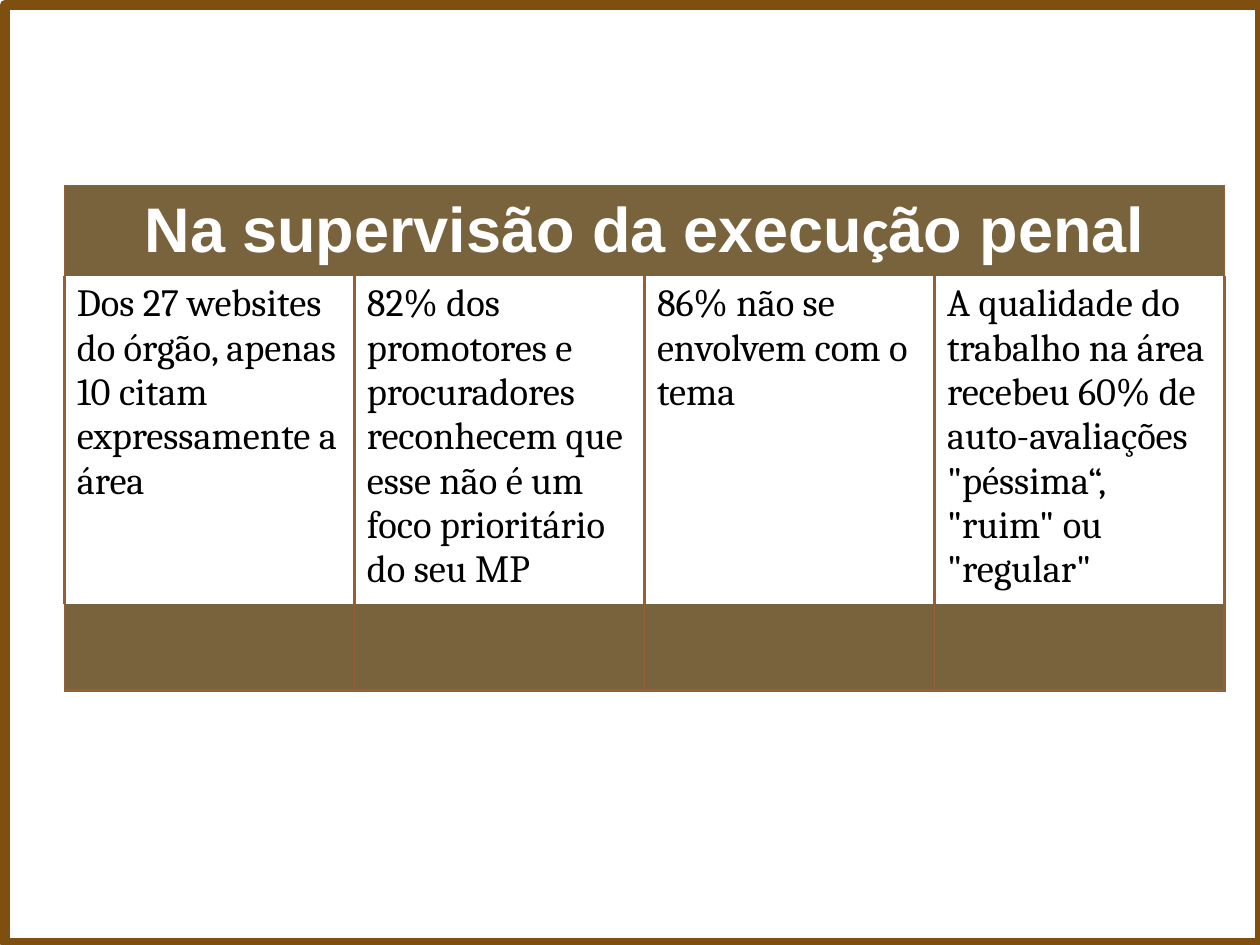
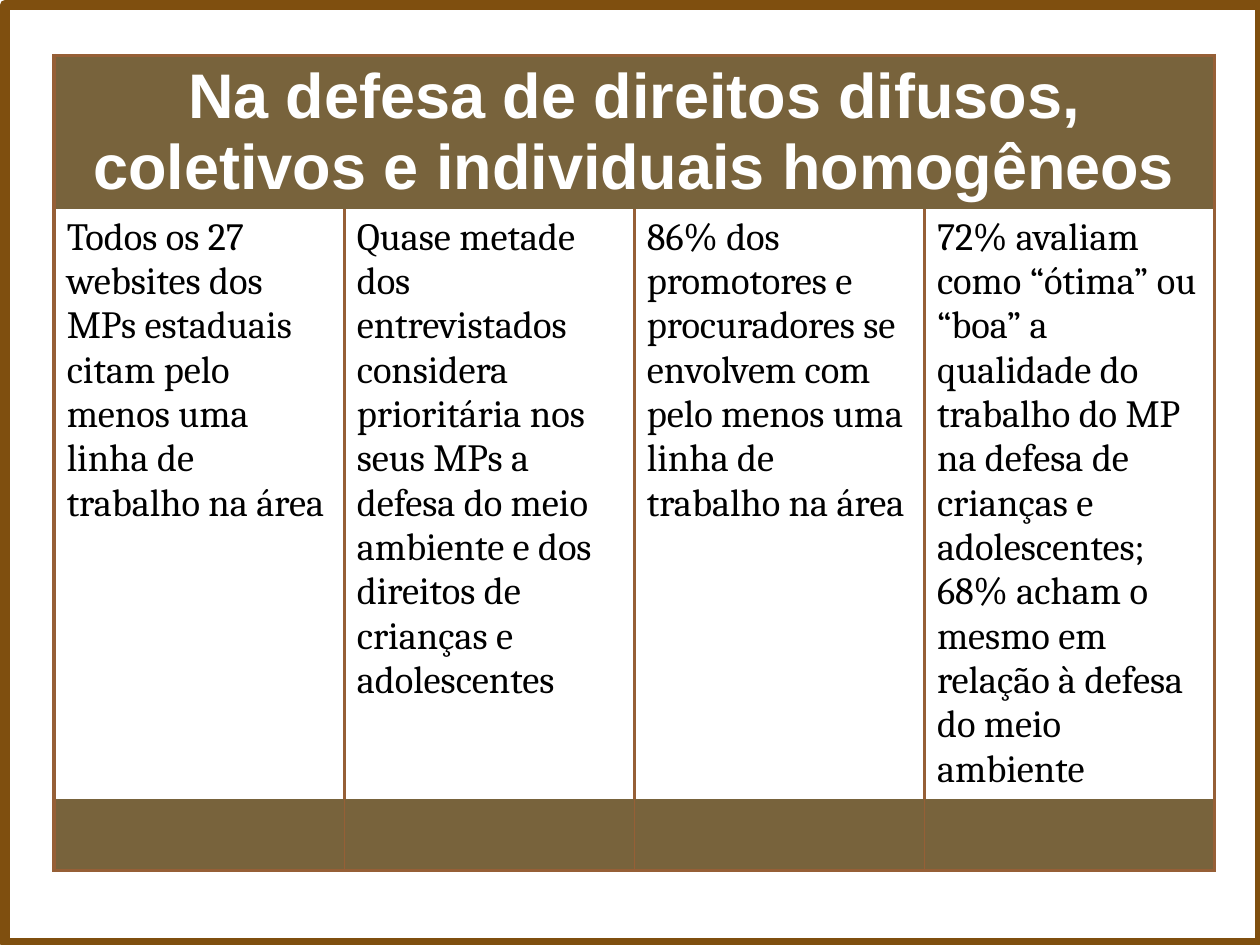
"""Build two framed slides, each with a four-column table of survey findings."""
import pptx
import pptx.dml.color
import pptx.enum.shapes
import pptx.enum.text
import pptx.oxml
import pptx.oxml.ns
import pptx.util

RGBColor = pptx.dml.color.RGBColor
Inches = pptx.util.Inches
Pt = pptx.util.Pt

WHITE = RGBColor(0xFF, 0xFF, 0xFF)
BLACK = RGBColor(0x00, 0x00, 0x00)
FRAME_BROWN = RGBColor(0x7F, 0x4F, 0x0F)
BAND_BROWN = RGBColor(0x78, 0x63, 0x3C)
RULE_BROWN = RGBColor(0x96, 0x5F, 0x36)

COLUMN_COUNT = 4
TABLE_WIDTH = 9.21
THICK = 2.25

FINDINGS = [
    {
        "heading": [("Na supervisão da execu", "Arial"), ("ç", "Calibri"), ("ão penal", "Arial")],
        "answers": [
            "Dos 27 websites do órgão, apenas 10 citam expressamente a área",
            "82% dos promotores e procuradores reconhecem que esse não é um foco prioritário do seu MP",
            "86% não se envolvem com o tema",
            "A qualidade do trabalho na área recebeu 60% de auto-avaliações \"péssima“, \"ruim\" ou \"regular\"",
        ],
        "corner": (0.51, 1.47),
        "rows": (0.72, 2.6, 0.69),
        "heading_rule": 0.75,
        "footer_rules": (0.75, 0.75, 0.75, 0.75, THICK),
    },
    {
        "heading": [("Na defesa de direitos difusos, coletivos e individuais homogêneos", "Arial")],
        "answers": [
            "Todos os 27 websites dos MPs estaduais citam pelo menos uma linha de trabalho na área",
            "Quase metade dos entrevistados considera prioritária nos seus MPs a defesa do meio "
            "ambiente e dos direitos de crianças e adolescentes",
            "86% dos promotores e procuradores se envolvem com pelo menos uma linha de trabalho na área",
            "72% avaliam como “ótima” ou “boa” a qualidade do trabalho do MP na defesa de crianças e "
            "adolescentes; 68% acham o mesmo em relação à defesa do meio ambiente",
        ],
        "corner": (0.43, 0.44),
        "rows": (1.22, 4.68, 0.57),
        "heading_rule": THICK,
        "footer_rules": (THICK, 1, 1, 1, THICK),
    },
]


def write(paragraph, text, font="Cambria", size=22, color=BLACK, bold=False):
    run = paragraph.add_run()
    run.text = text
    run.font.name = font
    run.font.size = Pt(size)
    run.font.bold = bold
    run.font.color.rgb = color


def style_cell(cell, fill=None, **rules):
    if fill is None:
        cell.fill.background()
    else:
        cell.fill.solid()
        cell.fill.fore_color.rgb = fill
    properties = cell._tc.get_or_add_tcPr()
    for position, side in enumerate("LRTB"):
        width = rules.get(side, 0)
        paint = f'<a:solidFill><a:srgbClr val="{RULE_BROWN}"/></a:solidFill>' if width else "<a:noFill/>"
        properties.insert(position, pptx.oxml.parse_xml(
            f'<a:ln{side} {pptx.oxml.ns.nsdecls("a")} w="{int(Pt(width))}">{paint}</a:ln{side}>'))


def add_frame(presentation, slide):
    frame = slide.shapes.add_shape(
        pptx.enum.shapes.MSO_SHAPE.RECTANGLE, Inches(0.04), Inches(0.04), Inches(9.96), Inches(7.45))
    frame.shadow.inherit = False
    frame.fill.solid()
    frame.fill.fore_color.rgb = WHITE
    frame.line.color.rgb = FRAME_BROWN
    frame.line.width = Pt(6)
    presentation.slide_master.element.cSld.spTree.insert(2, frame.element)


def add_findings(slide, finding):
    left, top = finding["corner"]
    table = slide.shapes.add_table(
        len(finding["rows"]), COLUMN_COUNT, Inches(left), Inches(top),
        Inches(TABLE_WIDTH), Inches(sum(finding["rows"]))).table
    table.first_row = table.horz_banding = False
    for row, height in zip(table.rows, finding["rows"]):
        row.height = Inches(height)

    heading = table.cell(0, 0)
    heading.merge(table.cell(0, COLUMN_COUNT - 1))
    heading.vertical_anchor = pptx.enum.text.MSO_ANCHOR.BOTTOM
    title = heading.text_frame.paragraphs[0]
    title.alignment = pptx.enum.text.PP_ALIGN.CENTER
    for text, font in finding["heading"]:
        write(title, text, font=font, size=36, color=WHITE, bold=True)

    rule = finding["heading_rule"]
    footer_rules = finding["footer_rules"]
    last = COLUMN_COUNT - 1
    for column, answer in enumerate(finding["answers"]):
        style_cell(table.cell(0, column), BAND_BROWN, T=rule,
                   L=rule if column == 0 else 0, R=rule if column in (0, last) else 0)
        body = table.cell(1, column)
        write(body.text_frame.paragraphs[0], answer)
        style_cell(body, L=THICK, R=THICK)
        style_cell(table.cell(2, column), BAND_BROWN,
                   L=footer_rules[column], R=footer_rules[column + 1], B=THICK)


def main():
    presentation = pptx.Presentation()
    presentation.slide_width = Inches(10)
    presentation.slide_height = Inches(7.5)
    blank = presentation.slide_layouts[6]
    slides = [presentation.slides.add_slide(blank) for _ in FINDINGS]
    add_frame(presentation, slides[0])
    for slide, finding in zip(slides, FINDINGS):
        add_findings(slide, finding)
    presentation.save("out.pptx")


if __name__ == "__main__":
    main()
